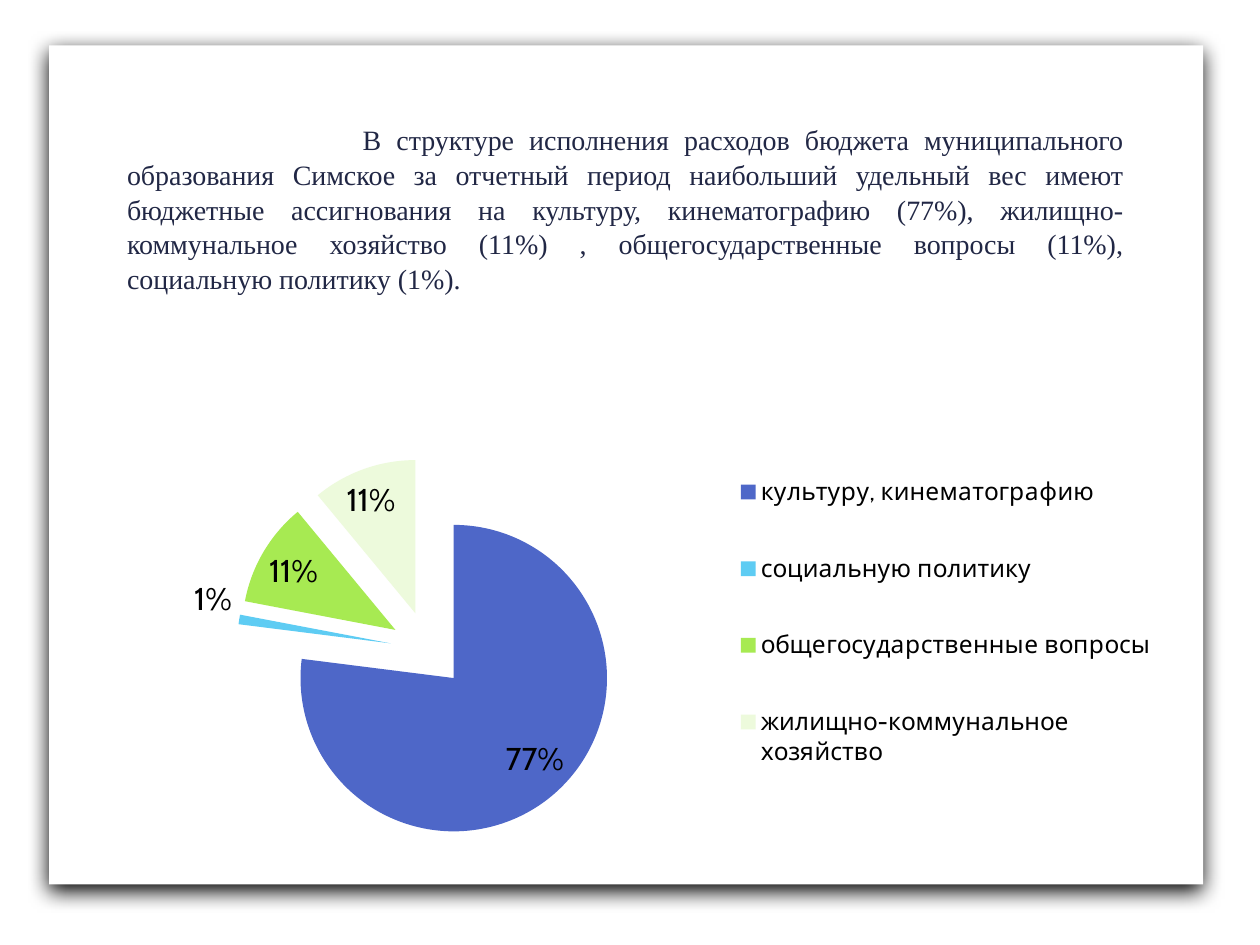
from lxml.etree import SubElement
from pptx import Presentation
from pptx.chart.data import CategoryChartData
from pptx.dml.color import RGBColor
from pptx.enum.chart import XL_CHART_TYPE, XL_LABEL_POSITION, XL_LEGEND_POSITION
from pptx.enum.shapes import MSO_SHAPE
from pptx.enum.text import MSO_ANCHOR, PP_ALIGN
from pptx.oxml import parse_xml
from pptx.oxml.ns import nsdecls, qn
from pptx.util import Inches, Pt

WHITE = RGBColor(0xFF, 0xFF, 0xFF)
BLACK = RGBColor(0, 0, 0)
NAVY = RGBColor(0x21, 0x27, 0x45)

SUMMARY = (
    "В структуре исполнения расходов бюджета муниципального образования Симское "
    "за отчетный период наибольший удельный вес имеют бюджетные ассигнования на "
    "культуру, кинематографию (77%), жилищно-коммунальное хозяйство (11%) , "
    "общегосударственные вопросы (11%), социальную политику (1%)."
)
EXPENSES = [
    ("культуру, кинематографию", 77, RGBColor(0x4E, 0x67, 0xC8)),
    ("социальную политику", 1, RGBColor(0x5E, 0xCC, 0xF3)),
    ("общегосударственные вопросы", 11, RGBColor(0xA7, 0xEA, 0x52)),
    ("жилищно-коммунальное хозяйство", 11, RGBColor(0xED, 0xFA, 0xDC)),
]
EXPLOSION = 25
WIDTH, HEIGHT = Inches(10), Inches(7.5)
PANEL_BOX = (0.39, 0.36, 9.16, 6.66)
SUMMARY_BOX = (0.91, 0.91, 8.11, 1.68)
CHART_BOX = (0.56, 3.2, 8.74, 3.62)
PIE_SHARE = {"x": 0.15, "y": 0.12, "w": 0.35, "h": 0.84}
LEGEND_SHARE = {"x": 0.6, "y": 0.06, "w": 0.39, "h": 0.84}

SUMMARY_FORMAT = {"alignment": PP_ALIGN.JUSTIFY, "line_spacing": 1.04}
SUMMARY_FONT = {"name": "Times New Roman", "size": Pt(16)}
CHART_FONT = {"name": "Cabin", "size": Pt(18), "bold": False}
LEGEND_FONT = {"name": "Cabin", "size": Pt(14)}
LEGEND_FORMAT = {"position": XL_LEGEND_POSITION.RIGHT, "include_in_layout": False}
LABEL_FORMAT = {
    "show_percentage": True,
    "show_value": False,
    "number_format": "0%",
    "number_format_is_linked": False,
    "position": XL_LABEL_POSITION.BEST_FIT,
}


def apply(target, values):
    for attribute, value in values.items():
        setattr(target, attribute, value)


def style_font(font, values, color):
    apply(font, values)
    font.color.rgb = color


def add_white_box(slide, box):
    white_box = slide.shapes.add_shape(MSO_SHAPE.RECTANGLE, *map(Inches, box))
    white_box.shadow.inherit = False
    white_box.fill.solid()
    white_box.fill.fore_color.rgb = WHITE
    white_box.line.fill.background()
    return white_box


def add_panel(slide):
    panel = add_white_box(slide, PANEL_BOX)
    effects = panel._element.spPr.find(qn("a:effectLst"))
    glow = SubElement(effects, qn("a:outerShdw"), blurRad=str(Pt(12)),
                      dist=str(Pt(4)), dir="5400000", algn="ctr", rotWithShape="0")
    SubElement(glow, qn("a:srgbClr"), val=str(BLACK))


def add_summary(slide):
    frame = add_white_box(slide, SUMMARY_BOX).text_frame
    apply(frame, {"word_wrap": True, "vertical_anchor": MSO_ANCHOR.TOP})
    paragraph = frame.paragraphs[0]
    apply(paragraph, SUMMARY_FORMAT)
    paragraph._p.get_or_add_pPr().set("indent", str(Inches(1.87)))
    run = paragraph.add_run()
    run.text = SUMMARY
    style_font(run.font, SUMMARY_FONT, NAVY)


def place(element, shares, target=""):
    layout = element.find(qn("c:layout"))
    if layout is not None:
        element.remove(layout)
    edges = "".join(f'<c:{side}Mode val="edge"/>' for side in "xy")
    sizes = "".join(f'<c:{side} val="{share}"/>' for side, share in shares.items())
    layout = parse_xml(f'<c:layout {nsdecls("c")}><c:manualLayout>{target}{edges}{sizes}'
                       "</c:manualLayout></c:layout>")
    element.insert(1 if element.tag == qn("c:legend") else 0, layout)


def add_expense_chart(slide):
    names, shares, colors = zip(*EXPENSES)
    data = CategoryChartData()
    data.categories = names
    data.add_series("Series 1", shares)
    chart = slide.shapes.add_chart(
        XL_CHART_TYPE.PIE, *map(Inches, CHART_BOX), data).chart
    apply(chart, {"has_title": False, "has_legend": True})
    style_font(chart.font, CHART_FONT, BLACK)
    apply(chart.legend, LEGEND_FORMAT)
    style_font(chart.legend.font, LEGEND_FONT, BLACK)
    place(chart.legend._element, LEGEND_SHARE)

    pie = chart.plots[0]
    apply(pie, {"vary_by_categories": True, "has_data_labels": True})
    apply(pie.data_labels, LABEL_FORMAT)
    style_font(pie.data_labels.font, CHART_FONT, BLACK)
    place(chart._chartSpace.chart.plotArea, PIE_SHARE, '<c:layoutTarget val="inner"/>')

    expenses = pie.series[0]
    for index, color in enumerate(colors):
        fill = expenses.points[index].format.fill
        fill.solid()
        fill.fore_color.rgb = color
    explosion = parse_xml(f'<c:explosion {nsdecls("c")} val="{EXPLOSION}"/>')
    expenses._element.find(qn("c:dPt")).addprevious(explosion)


def main():
    """Build the slide on the structure of budget expenses."""
    presentation = Presentation()
    apply(presentation, {"slide_width": WIDTH, "slide_height": HEIGHT})
    slide = presentation.slides.add_slide(presentation.slide_layouts[6])
    add_panel(slide)
    add_summary(slide)
    add_expense_chart(slide)
    presentation.save("out.pptx")


if __name__ == "__main__":
    main()
